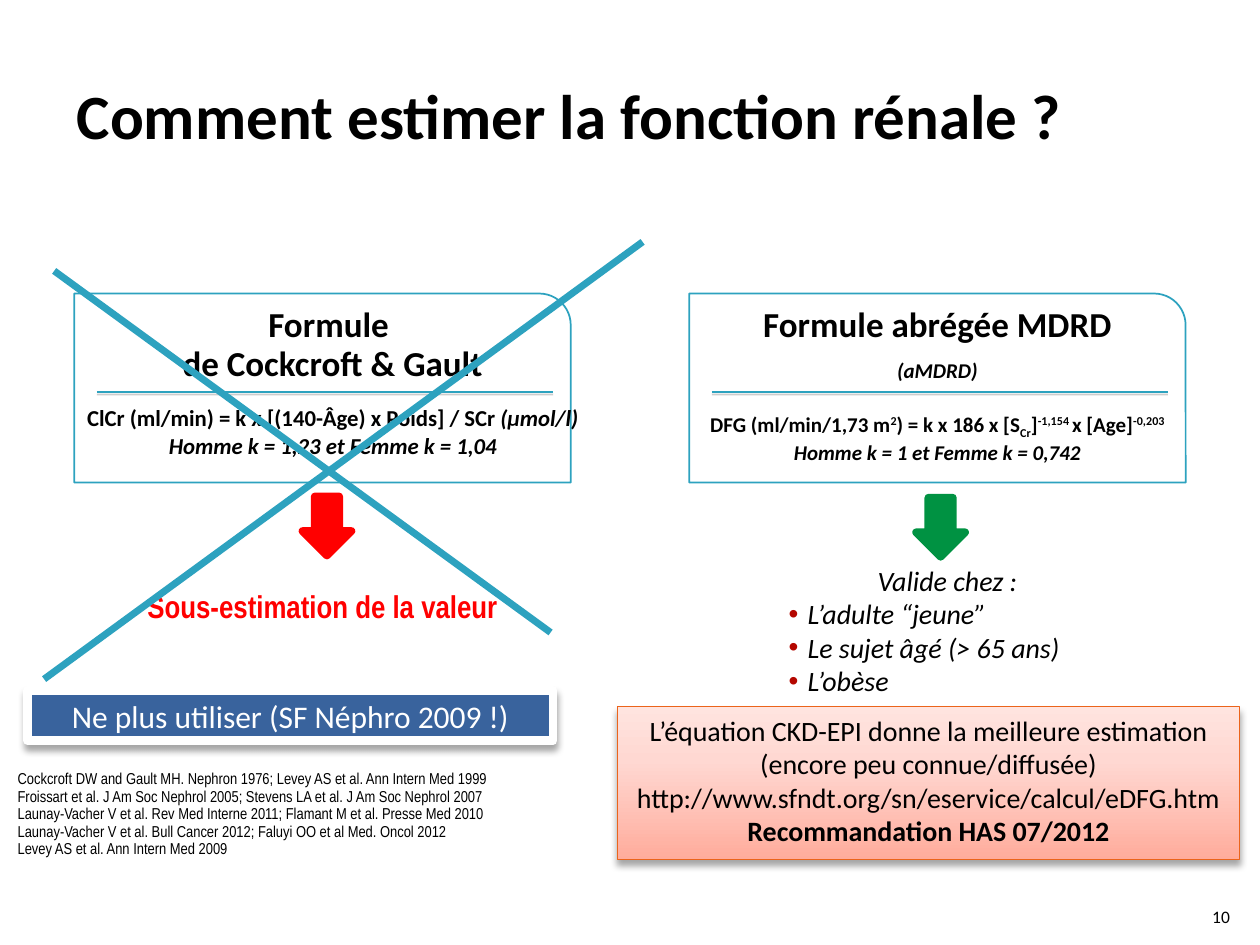
from dataclasses import dataclass

from lxml import etree
from pptx import Presentation
from pptx import util as u
from pptx.dml.color import RGBColor
from pptx.enum import shapes, text
from pptx.oxml.ns import qn

KIND = shapes.MSO_SHAPE
ALIGN = text.PP_ALIGN
ANCHOR = text.MSO_ANCHOR


@dataclass(frozen=True)
class Theme:
    """Hold the colours, fonts and type sizes."""
    ink: str = "000000"
    paper: str = "FFFFFF"
    teal: str = "2DA2BF"
    red: str = "FF0000"
    green: str = "009242"
    blue: str = "39639D"
    rust: str = "EB641B"
    dot: str = "B40700"
    gray: str = "808080"
    glow: tuple = ((0, "FFAC9C"), (65, "FFD8D2"), (100, "FFE4DF"))
    main: str = "Calibri"
    thin: str = "Arial Narrow"
    title: int = 36
    head: int = 20
    lead: int = 18
    list: int = 16
    rule: int = 13
    small: int = 12
    page: int = 10
    cite: int = 9


def node(up, tag, **attrs):
    """Add a drawing element with its attributes."""
    return etree.SubElement(up, qn("a:" + tag), {k: str(v) for k, v in attrs.items()})


class Deck:
    """Draw styled elements on a slide of 100 columns and 75 rows."""

    def __init__(self, theme):
        self.theme = theme
        self.prs = Presentation()
        self.prs.slide_width, self.prs.slide_height = u.Inches(10), u.Inches(7.5)
        self.slide = self.prs.slides.add_slide(self.prs.slide_layouts[1])
        self.col = self.prs.slide_width / 100
        self.row = self.prs.slide_height / 75

    def place(self, x, y, w, h):
        """Turn grid units into lengths."""
        return [round(n * s) for n, s in zip((x, y, w, h), (self.col, self.row) * 2)]

    def shade(self, props, color, alpha, blur, dist):
        """Give an element a shadow that falls downwards."""
        box = props.find(qn("a:effectLst"))
        if box is None:
            box = node(props, "effectLst")
        drop = node(box, "outerShdw", blurRad=u.Pt(blur), dist=u.Pt(dist),
                    dir=5400000, algn="t", rotWithShape=0)
        node(node(drop, "srgbClr", val=color), "alpha", val=alpha * 1000)

    def shape(self, kind, at, fill, edge, width, drop=False):
        """Add a preset shape with a flat or graded fill."""
        item = self.slide.shapes.add_shape(kind, *self.place(*at))
        item.shadow.inherit = False
        props = item._element.spPr
        if isinstance(fill, tuple):
            item.fill.gradient()
            item.fill.gradient_angle = 90
            stops = props.find(".//" + qn("a:gsLst"))
            for old in list(stops):
                stops.remove(old)
            for pos, color in fill:
                node(node(stops, "gs", pos=pos * 1000), "srgbClr", val=color)
        else:
            item.fill.solid()
            item.fill.fore_color.rgb = RGBColor.from_string(fill)
        item.line.color.rgb = RGBColor.from_string(edge)
        item.line.width = u.Pt(width)
        if drop:
            self.shade(props, self.theme.ink, 35, 4, 3)
        return item

    def line(self, x, y, to_x, to_y, width, drop=False):
        """Add a straight teal line."""
        ends = self.place(x, y, to_x, to_y)
        item = self.slide.shapes.add_connector(shapes.MSO_CONNECTOR.STRAIGHT, *ends)
        item.line.color.rgb = RGBColor.from_string(self.theme.teal)
        item.line.width = u.Pt(width)
        props = item._element.spPr
        node(props, "effectLst")
        if drop:
            self.shade(props, self.theme.gray, 38, 0, 1.6)

    def arrow(self, x, y, color):
        """Add a soft-cornered arrow that points down."""
        item = self.shape(KIND.DOWN_ARROW, (x, y, 3.9, 4.7), color, color, 4.33)
        node(item.line._get_or_add_ln(), "round")

    def box(self, at, **kw):
        """Add a text box."""
        return self.frame(self.slide.shapes.add_textbox(*self.place(*at)), **kw)

    def holder(self, index, at, **kw):
        """Move a placeholder of the template."""
        item = self.slide.placeholders[index]
        item.left, item.top, item.width, item.height = self.place(*at)
        return self.frame(item, **kw)

    def frame(self, item, anchor=ANCHOR.TOP, flush=False):
        """Set up the text frame of an element."""
        frame = item.text_frame
        frame.word_wrap = True
        frame.auto_size = text.MSO_AUTO_SIZE.NONE
        frame.vertical_anchor = anchor
        if flush:
            frame.margin_left = frame.margin_right = 0
            frame.margin_top = frame.margin_bottom = 0
        return frame

    def para(self, frame, parts, size, color=None, face=None, bold=False, italic=False,
             align=ALIGN.CENTER, lead=None, after=0, bullet=False):
        """Add a paragraph; a part is a text or (text, changes)."""
        para = frame.paragraphs[0]
        if para.runs:
            para = frame.add_paragraph()
        para.alignment = align
        para.space_before, para.space_after = u.Pt(0), u.Pt(after)
        if lead:
            para.line_spacing = u.Pt(lead)
        props = para._p.get_or_add_pPr()
        hang = u.Inches(0.15) if bullet else 0
        props.set("marL", str(hang))
        props.set("indent", str(-hang))
        if bullet:
            node(node(props, "buClr"), "srgbClr", val=self.theme.dot)
            node(props, "buChar", char="•")
        else:
            node(props, "buNone")
        parts = [(p, {}) if isinstance(p, str) else p for p in parts]
        runs = []
        for words, change in parts:
            for n, piece in enumerate(words.split("\n")):
                if n:
                    para.add_line_break()
                if piece:
                    run = para.add_run()
                    run.text = piece
                    runs.append((run, change))
        for font in [para.font] + [run.font for run, _ in runs]:
            font.name = face or self.theme.main
            font.size = u.Pt(size)
            font.bold, font.italic = bold, italic
            font.color.rgb = RGBColor.from_string(color or self.theme.ink)
        for run, change in runs:
            run.font.size = u.Pt(change.get("size", size))
            run.font.italic = change.get("italic", italic)
            if "shift" in change:
                run._r.get_or_add_rPr().set("baseline", str(change["shift"] * 1000))

    def card(self, x, wide, head, rule, size):
        """Add a formula card with its heading, divider and rule."""
        self.shape(KIND.ROUND_1_RECTANGLE, (x, 23.3, 39.4, 15), self.theme.paper,
                   self.theme.teal, 1)
        frame = self.box((x, 24.3, wide, 14.2), flush=True)
        self.para(frame, head, self.theme.head, bold=True, lead=22, after=12)
        self.para(frame, rule, size, bold=True, after=6)
        self.line(x + 1.8, 31.1, x + 38, 31.1, 1, drop=True)


def main():
    """Build and save the slide."""
    t = Theme()
    d = Deck(t)
    up, down, slant = {"shift": 30}, {"shift": -25}, {"italic": True}
    left, right = 5.9, 54.7

    title = d.holder(0, (5.1, 2.8, 90, 12.5), anchor=ANCHOR.MIDDLE)
    d.para(title, ["Comment estimer la fonction rénale ?"], t.title, bold=True,
           align=ALIGN.LEFT)
    page = d.box((94.6, 70.1, 4, 4), anchor=ANCHOR.BOTTOM)
    d.para(page, ["10"], t.page, align=ALIGN.RIGHT)

    d.card(left, 41, ["Formule \nde Cockcroft & Gault"],
           ["ClCr (ml/min) = k x [(140-Âge) x Poids] / SCr ",
            ("(µmol/l)\nHomme k = 1,23 et Femme k = 1,04", slant)], t.rule)
    d.card(right, 39.4,
           ["Formule abrégée MDRD\n", ("(aMDRD)", {"size": t.small, "italic": True})],
           ["DFG (ml/min/1,73 m", ("2", up), ") = k x 186 x [S", ("Cr", down), "]",
            ("-1,154 ", up), "x [Age]", ("-0,203", up), (" ", {"size": t.list}),
            ("Homme k = 1 et Femme k = 0,742", slant)], t.small)

    cites = d.box((1.4, 60.2, 42.3, 7.9), anchor=ANCHOR.BOTTOM, flush=True)
    for cite in (
        "Cockcroft DW and Gault MH. Nephron 1976; Levey AS et al. Ann Intern Med 1999",
        "Froissart et al. J Am Soc Nephrol 2005; Stevens LA et al. J Am Soc Nephrol 2007",
        "Launay-Vacher V et al. Rev Med Interne 2011; Flamant M et al. Presse Med 2010",
        "Launay-Vacher V et al. Bull Cancer 2012; Faluyi OO et al Med. Oncol 2012",
        "Levey AS et al. Ann Intern Med 2009",
    ):
        d.para(cites, [cite], t.cite, face=t.thin, align=ALIGN.LEFT, lead=10)

    d.arrow(24, 39.4, t.red)
    d.arrow(72.7, 39.5, t.green)
    flaw = d.box((left, 46.1, 39.4, 4))
    d.para(flaw, ["Sous-estimation de la valeur"], t.lead, t.red, t.thin, bold=True)

    valid = d.holder(1, (62.6, 44.7, 25.2, 13.1), flush=True)
    d.para(valid, ["Valide chez :"], t.list, italic=True)
    for case in ("L’adulte “jeune”", "Le sujet âgé (> 65 ans)", "L’obèse"):
        d.para(valid, [case], t.list, italic=True, align=ALIGN.LEFT, bullet=True)

    d.line(51, 19.2, 3.5, 53.9, 4)
    d.line(43.7, 50.2, 4.3, 21.5, 4)

    stop = d.shape(KIND.RECTANGLE, (2.2, 54.8, 41.7, 4), t.blue, t.paper, 5, drop=True)
    d.para(d.frame(stop, ANCHOR.MIDDLE), ["Ne plus utiliser (SF Néphro 2009 !)"], t.lead,
           t.paper)
    best = d.shape(KIND.RECTANGLE, (49, 56.1, 49.4, 12.1), t.glow, t.rust, 0.75, drop=True)
    frame = d.frame(best)
    for words, bold in (
        ("L’équation CKD-EPI donne la meilleure estimation (encore peu connue/diffusée)", False),
        ("http://www.sfndt.org/sn/eservice/calcul/eDFG.htm", False),
        ("Recommandation HAS 07/2012", True),
    ):
        d.para(frame, [words], t.list, bold=bold)

    d.prs.save("out.pptx")


if __name__ == "__main__":
    main()
